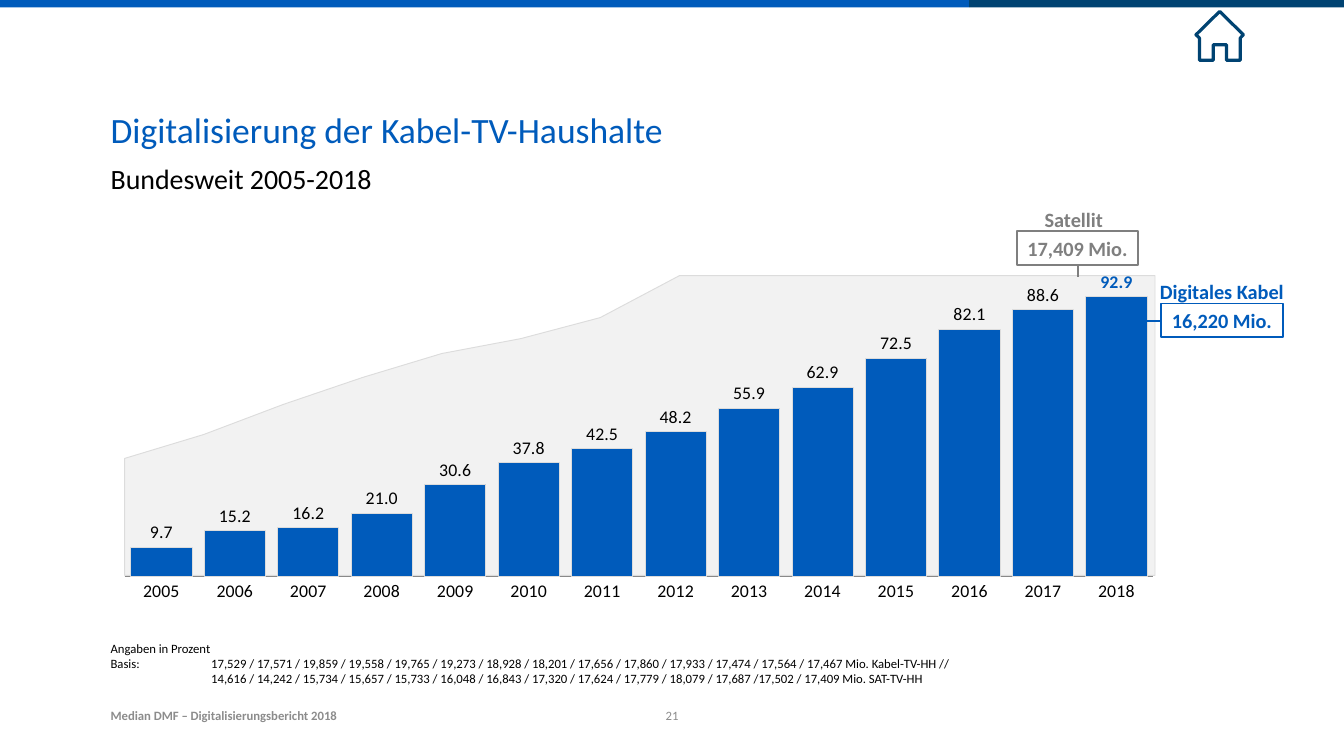
"""Build the slide on the digitalisation of cable TV households."""
from dataclasses import dataclass, field
from typing import Any

from lxml import etree
from pptx import Presentation
from pptx import util as u
from pptx.chart import data
from pptx.dml import color
from pptx.enum import chart as ch, shapes as sh, text as tx
from pptx.oxml import ns


@dataclass(frozen=True)
class Theme:
    """Hold the colours and type sizes."""
    font: str = "Calibri"
    blue: str = "005BBB"
    navy: str = "004372"
    black: str = "000000"
    grey: str = "7F7F7F"
    mute: str = "8C8C8C"
    axis: str = "898989"
    pale: str = "F2F2F2"
    edge: str = "DCDCDC"
    head: float = 28
    sub: float = 22
    call: float = 16
    tick: float = 14
    note: float = 10


T = Theme()
Box = tuple[float, float, float, float]
TOP, MID, LOW = tx.MSO_ANCHOR.TOP, tx.MSO_ANCHOR.MIDDLE, tx.MSO_ANCHOR.BOTTOM
LEFT, MITTE = tx.PP_ALIGN.LEFT, tx.PP_ALIGN.CENTER


@dataclass
class Label:
    """Describe one piece of text, framed or not."""
    words: str
    box: Box
    size: float
    tint: str
    bold: bool = False
    anchor: Any = TOP
    align: Any = LEFT
    frame: bool = False
    tab: float = 0


@dataclass
class Graph:
    """Describe one chart."""
    kind: Any
    box: Box
    plot: Box
    cats: list[str]
    vals: list[float]
    fill: str
    axis: dict[str, Any]
    style: dict[str, Any] = field(default_factory=dict)
    marks: bool = False


YEARS = [str(y) for y in range(2005, 2019)]
SAT = [39, 47, 57, 66, 74, 79, 86] + [100] * 7
CABLE = [9.7, 15.2, 16.2, 21, 30.6, 37.8, 42.5, 48.2, 55.9, 62.9, 72.5, 82.1, 88.6, 92.9]
NOTE = (
    "Angaben in Prozent\vBasis: \t17,529 / 17,571 / 19,859 / 19,558 / 19,765 / 19,273 / 18,928 / "
    "18,201 / 17,656 / 17,860 / 17,933 / 17,474 / 17,564 / 17,467 Mio. Kabel-TV-HH //\v"
    "\t14,616 / 14,242 / 15,734 / 15,657 / 15,733 / 16,048 / 16,843 / 17,320 / 17,624 / "
    "17,779 / 18,079 / 17,687 /17,502 / 17,409 Mio. SAT-TV-HH"
)
BARS = [((0, 0, 763.2, 5.76), T.blue), ((763.2, 0, 295.2, 5.76), T.navy)]
GRAPHS = [
    Graph(ch.XL_CHART_TYPE.AREA, (86.4, 170.64, 836.64, 293.76), (0.014, 0.078, 0.97, 0.884),
          [str(n) for n in range(1, 15)], SAT, T.pale, {"visible": False}),
    Graph(ch.XL_CHART_TYPE.COLUMN_CLUSTERED, (82.08, 177.84, 848.16, 342),
          (0.019, 0.045, 0.955, 0.763), YEARS, CABLE, T.blue,
          {"major_tick_mark": ch.XL_TICK_MARK.NONE}, {"gap_width": 20}, True),
]
LABELS = [
    Label("Bundesweit 2005-2018", (87.12, 127.44, 788.4, 41.04), T.sub, T.black),
    Label("Digitalisierung der Kabel-TV-Haushalte", (87.12, 84.96, 884.16, 42.48), T.head, T.blue),
    Label("Median DMF – Digitalisierungsbericht 2018", (87.12, 552.96, 300.96, 16.56),
          T.note, T.mute, True, LOW),
    Label(NOTE, (87.12, 518.4, 788.4, 22.32), T.note, T.black, anchor=LOW, tab=79.2),
    Label("16,220 Mio.", (914.4, 239.04, 95.76, 26.64), T.call, T.blue, True, MID, MITTE, True),
    Label("17,409 Mio.", (800.64, 182.16, 95.76, 26.64), T.call, T.grey, True, MID, MITTE, True),
    Label("Digitales Kabel", (902.16, 216, 120.24, 26.64), T.call, T.blue, True, MID, MITTE),
    Label("Satellit", (785.52, 159.84, 120.24, 26.64), T.call, T.grey, True, MID, MITTE),
    Label("21", (517.68, 551.52, 23.04, 18), T.note, T.mute, False, LOW, MITTE),
]
LINES = [((848.88, 208.8, 848.88, 218.16), T.grey), ((888.48, 252.72, 914.4, 252.72), T.blue)]
HOUSE = [(960.5, 9), (979.2, 27.4), (976.7, 30), (976.7, 47.5), (965.9, 47.5), (965.9, 35.3),
         (955.4, 35.3), (955.4, 47.5), (944.6, 47.5), (944.6, 30), (941.8, 27.4)]


def put(item: Any, vals: dict[str, Any]) -> None:
    """Set each named value on the item."""
    for name, val in vals.items():
        setattr(item, name, val)


def pts(box: Box) -> list[u.Pt]:
    """Turn numbers into point lengths."""
    return [u.Pt(n) for n in box]


def rgb(tint: str) -> color.RGBColor:
    """Turn a hex string into a colour."""
    return color.RGBColor.from_string(tint)


def ink(form: Any, tint: str) -> None:
    """Fill with one colour."""
    form.fill.solid()
    form.fill.fore_color.rgb = rgb(tint)


def rim(line: Any, tint: str, width: float) -> None:
    """Style an outline."""
    line.color.rgb = rgb(tint)
    line.width = u.Pt(width)


def type_set(font: Any, size: float, tint: str, bold: bool = False) -> None:
    """Style a font."""
    put(font, {"name": T.font, "size": u.Pt(size), "bold": bold})
    font.color.rgb = rgb(tint)


def draw_bar(slide: Any, box: Box, tint: str) -> None:
    """Draw a plain band."""
    bar = slide.shapes.add_shape(sh.MSO_SHAPE.RECTANGLE, *pts(box))
    bar.shadow.inherit = False
    ink(bar, tint)
    bar.line.fill.background()


def draw_label(slide: Any, item: Label) -> None:
    """Draw a text, with a frame if asked."""
    if item.frame:
        form = slide.shapes.add_shape(sh.MSO_SHAPE.RECTANGLE, *pts(item.box))
        form.shadow.inherit = False
        form.fill.background()
        rim(form.line, item.tint, 1.5)
    else:
        form = slide.shapes.add_textbox(*pts(item.box))
    body = form.text_frame
    put(body, {"word_wrap": True, "vertical_anchor": item.anchor, "margin_left": 0,
               "margin_right": 0, "margin_top": 0, "margin_bottom": 0})
    para = body.paragraphs[0]
    para.text = item.words
    para.alignment = item.align
    if item.tab:
        tabs = etree.SubElement(para._p.get_or_add_pPr(), ns.qn("a:tabLst"))
        etree.SubElement(tabs, ns.qn("a:tab"), pos=str(int(u.Pt(item.tab))), algn="l")
    for run in para.runs:
        type_set(run.font, item.size, item.tint, item.bold)


def place_plot(chart: Any, plot: Box) -> None:
    """Fix the inner plot area."""
    area = chart._chartSpace.find(".//" + ns.qn("c:plotArea"))
    for old in area.findall(ns.qn("c:layout")):
        area.remove(old)
    lay = etree.Element(ns.qn("c:layout"))
    area.insert(0, lay)
    man = etree.SubElement(lay, ns.qn("c:manualLayout"))
    vals = {"layoutTarget": "inner", "xMode": "edge", "yMode": "edge"}
    vals |= {key: str(num) for key, num in zip("xywh", plot)}
    for key, val in vals.items():
        etree.SubElement(man, ns.qn("c:" + key), val=val)


def draw_graph(slide: Any, item: Graph) -> None:
    """Draw a chart on a hidden value scale."""
    feed = data.CategoryChartData(number_format="0.0")
    feed.categories = item.cats
    feed.add_series("Series 1", item.vals)
    chart = slide.shapes.add_chart(item.kind, *pts(item.box), feed).chart
    put(chart, {"has_legend": False, "has_title": False})
    type_set(chart.font, T.tick, T.black)
    place_plot(chart, item.plot)
    scale, base, plot = chart.value_axis, chart.category_axis, chart.plots[0]
    put(scale, {"minimum_scale": 0, "maximum_scale": 110, "has_major_gridlines": False,
                "major_tick_mark": ch.XL_TICK_MARK.NONE,
                "tick_label_position": ch.XL_TICK_LABEL_POSITION.NONE})
    scale.format.line.fill.background()
    put(base, {"has_major_gridlines": False} | item.axis)
    rim(base.format.line, T.axis, 0.75)
    put(plot, {"vary_by_categories": False} | item.style)
    row = plot.series[0]
    ink(row.format, item.fill)
    rim(row.format.line, T.edge, 0.75)
    if item.marks:
        marks, last = row.data_labels, row.points[len(item.vals) - 1].data_label
        put(marks, {"show_value": True, "number_format": "0.0", "number_format_is_linked": False,
                    "position": ch.XL_LABEL_POSITION.OUTSIDE_END})
        type_set(marks.font, T.tick, T.black)
        type_set(last.font, T.tick, T.blue, True)
        last.position = ch.XL_LABEL_POSITION.OUTSIDE_END


def draw_line(slide: Any, ends: Box, tint: str) -> None:
    """Draw a straight leader line."""
    line = slide.shapes.add_connector(sh.MSO_CONNECTOR.STRAIGHT, *pts(ends))
    rim(line.line, tint, 1.5)
    etree.SubElement(line._element.spPr, ns.qn("a:effectLst"))


def draw_house(slide: Any) -> None:
    """Draw the home icon with rounded corners."""
    nodes = [(u.Pt(x), u.Pt(y)) for x, y in HOUSE]
    pen = slide.shapes.build_freeform(*nodes[0])
    pen.add_line_segments(nodes[1:], close=True)
    house = pen.convert_to_shape()
    house.shadow.inherit = False
    house.fill.background()
    rim(house.line, T.navy, 2.5)
    etree.SubElement(house.line._get_or_add_ln(), ns.qn("a:round"))


def main() -> None:
    """Build and save the slide."""
    deck = Presentation()
    put(deck, {"slide_width": u.Pt(1058.4), "slide_height": u.Pt(595.44)})
    slide = deck.slides.add_slide(deck.slide_layouts[6])
    for box, tint in BARS:
        draw_bar(slide, box, tint)
    for graph in GRAPHS:
        draw_graph(slide, graph)
    for label in LABELS:
        draw_label(slide, label)
    for ends, tint in LINES:
        draw_line(slide, ends, tint)
    draw_house(slide)
    deck.save("out.pptx")


if __name__ == "__main__":
    main()
